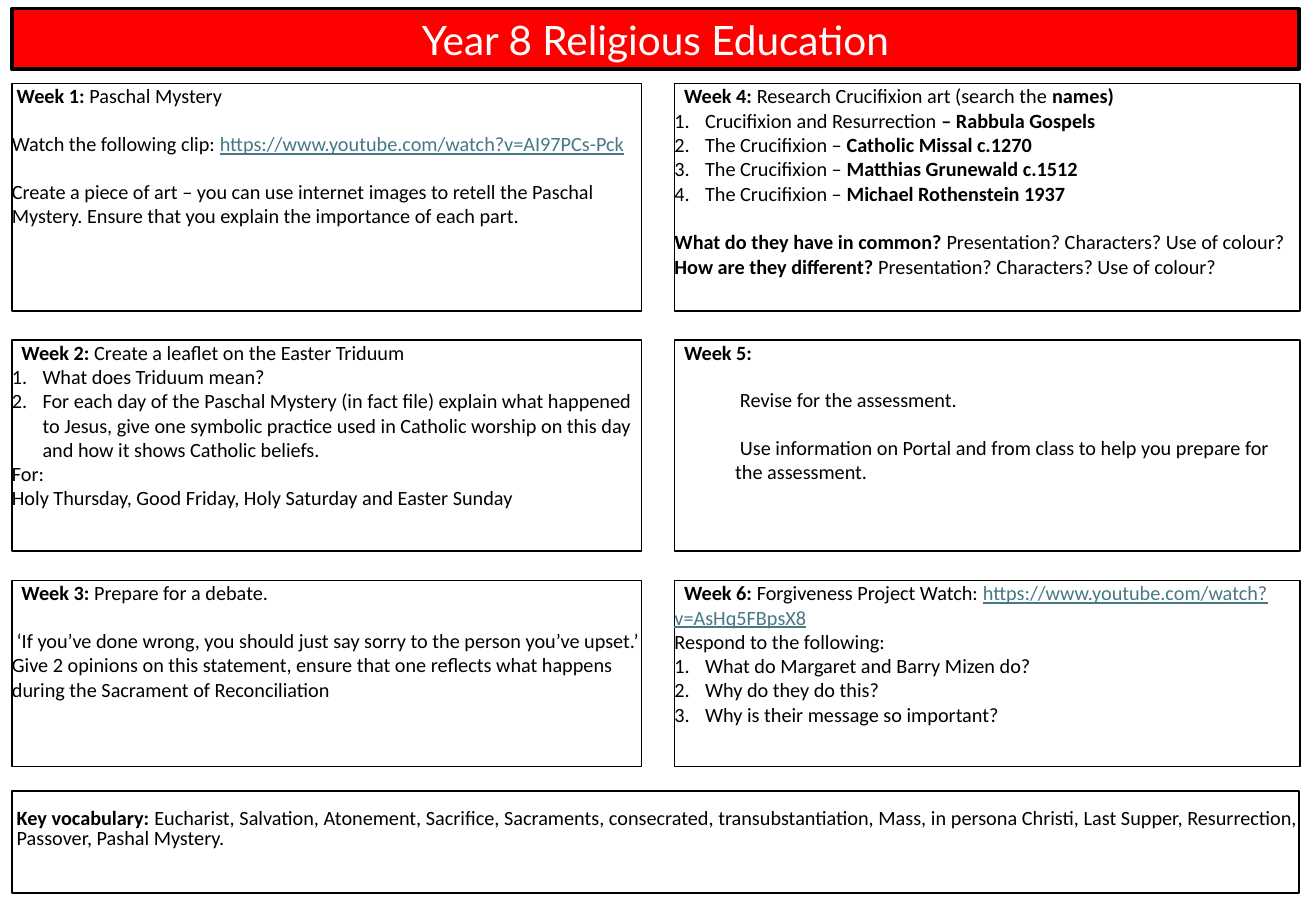
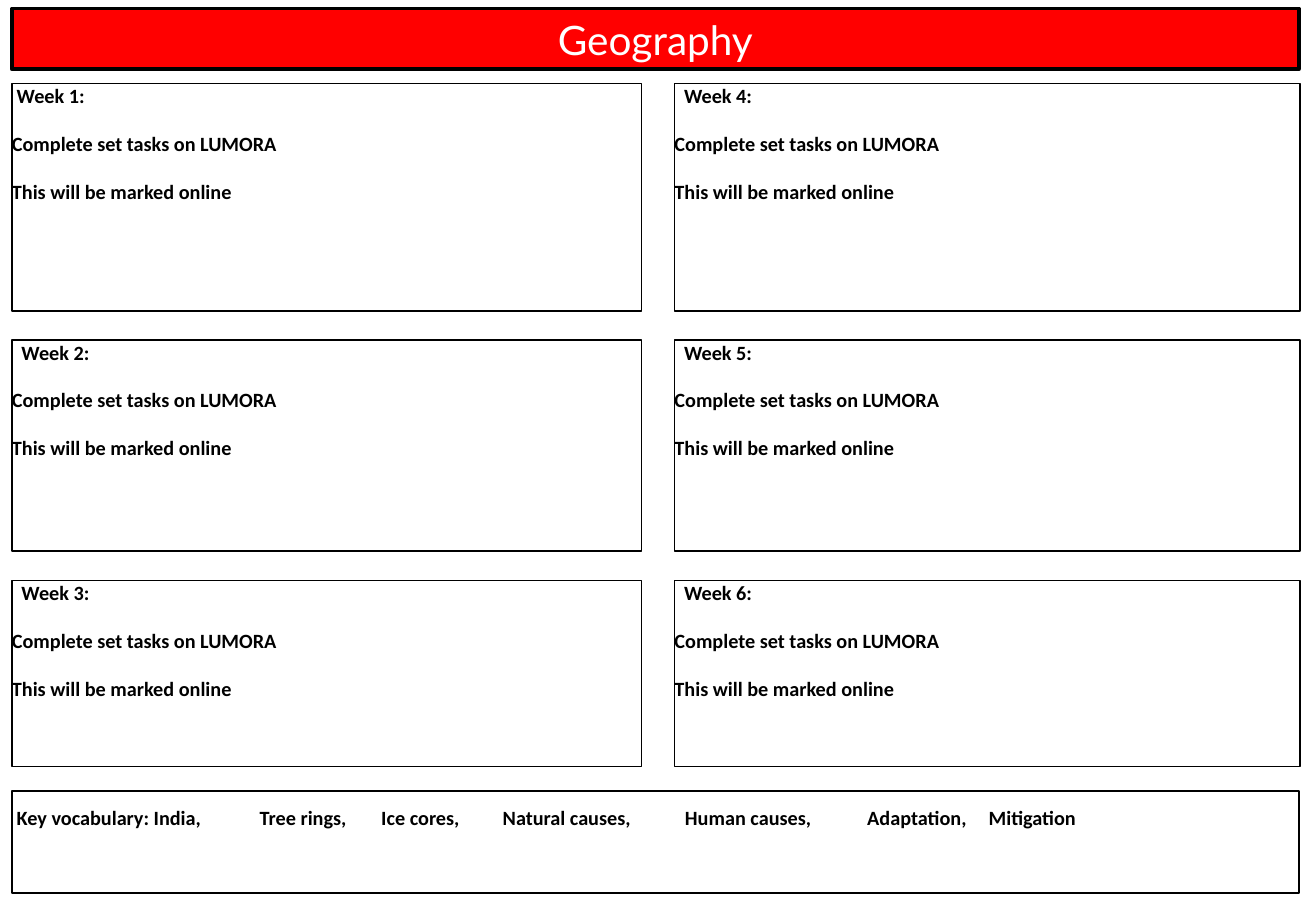
from dataclasses import dataclass

import pptx
import pptx.dml.color
import pptx.enum.shapes
import pptx.enum.text
import pptx.oxml.ns
import pptx.util
from lxml import etree

Cm, Pt = pptx.util.Cm, pptx.util.Pt
ALIGN = pptx.enum.text.PP_ALIGN
ANCHOR = pptx.enum.text.MSO_ANCHOR

# Shared look
BLACK, WHITE, RED, LINK = "000000", "FFFFFF", "FF0000", "467886"
TITLE_FONT, BODY_FONT = "Lato", "Calibri"
TITLE_SIZE, BODY_SIZE = 24, 12
GAP = 13.9  # points between separated paragraphs
ONE_LINE = 14.5
NUDGE = 0.1  # width of one space, in cm

# Page grid, in cm
LEFT, FULL_WIDTH = 0.25, 26.9
COLUMNS = ((LEFT, 13.16), (14.1, 13.08))
ROW_HEIGHTS = (4.75, 4.42, 3.89)
FIRST_ROW, ROW_GAP = 1.75, 0.61
VOCABULARY_TABS = (5.08, 7.62, 10.06, 15.14, 20.22, 22.76)


@dataclass(frozen=True)
class Span:
    text: str
    bold: bool = False
    link: bool = False


@dataclass(frozen=True)
class Para:
    spans: tuple[Span, ...]
    before: float = 0
    margin: float = 0
    indent: float = 0
    numbered: bool = False
    level: int = 0


@dataclass(frozen=True)
class Page:
    title: str
    weeks: tuple[tuple[Para, ...], ...]
    vocabulary: Para


# Text builders
def plain(text: str, before: float = 0, indent: float = 0) -> Para:
    return Para((Span(text),), before, indent=indent)


def strong(text: str, before: float = 0) -> Para:
    return Para((Span(text, bold=True),), before)


def numbered(text: str, bold_text: str = "") -> Para:
    spans = (Span(text),) + ((Span(bold_text, bold=True),) if bold_text else ())
    return Para(spans, margin=0.64, indent=-0.64, numbered=True)


def inset(text: str) -> Para:
    return Para((Span(text),), GAP, margin=1.27, indent=NUDGE, level=1)


def heading(week: int, *rest: Span) -> Para:
    label = f"Week {week}:" + (" " if rest else "")
    return Para((Span(label, bold=True), *rest), indent=NUDGE if week == 1 else 2 * NUDGE)


def question(text: str, before: float = 0) -> Para:
    return Para((Span(text, bold=True), Span(" Presentation? Characters? Use of colour?")), before)


def online_week(week: int) -> tuple[Para, ...]:
    return (heading(week), strong("Complete set tasks on LUMORA", GAP),
            strong("This will be marked online", GAP))


# Drawing
def colour(code: str) -> pptx.dml.color.RGBColor:
    return pptx.dml.color.RGBColor.from_string(code)


def style(run, font: str, size: float, code: str, bold: bool = False) -> None:
    run.font.name = font
    run.font.size = Pt(size)
    run.font.bold = bold
    run.font.color.rgb = colour(code)


def add_box(slide, left: float, top: float, width: float, height: float,
            line_width: float = 1, fill: str = ""):
    box = slide.shapes.add_shape(pptx.enum.shapes.MSO_SHAPE.RECTANGLE,
                                 Cm(left), Cm(top), Cm(width), Cm(height))
    box.shadow.inherit = False
    if fill:
        box.fill.solid()
        box.fill.fore_color.rgb = colour(fill)
    else:
        box.fill.background()
    box.line.color.rgb = colour(BLACK)
    box.line.width = Pt(line_width)
    frame = box.text_frame
    frame.word_wrap = True
    frame.vertical_anchor = ANCHOR.TOP
    frame.margin_left = frame.margin_right = frame.margin_top = frame.margin_bottom = 0
    return box


def write_para(para, content: Para) -> None:
    para.alignment = ALIGN.LEFT
    para.level = content.level
    para.space_before = Pt(content.before)
    properties = para._p.get_or_add_pPr()
    properties.set("marL", str(Cm(content.margin)))
    properties.set("indent", str(Cm(content.indent)))
    if content.numbered:
        etree.SubElement(properties, pptx.oxml.ns.qn("a:buAutoNum"), type="arabicPeriod")
    para.text = content.spans[0].text
    for span in content.spans[1:]:
        para.add_run().text = span.text
    for run, span in zip(para.runs, content.spans):
        style(run, BODY_FONT, BODY_SIZE, LINK if span.link else BLACK, span.bold)
        run.font.underline = span.link


def add_title(slide, text: str) -> None:
    box = add_box(slide, LEFT, 0.18, FULL_WIDTH, 1.27, 2.25, RED)
    frame = box.text_frame
    frame.vertical_anchor = ANCHOR.MIDDLE
    frame.text = text
    para = frame.paragraphs[0]
    para.alignment = ALIGN.CENTER
    style(para.runs[0], TITLE_FONT, TITLE_SIZE, WHITE)


def add_weeks(slide, weeks: tuple[tuple[Para, ...], ...]) -> None:
    for index, contents in enumerate(weeks):
        column, row = divmod(index, len(ROW_HEIGHTS))
        left, width = COLUMNS[column]
        top = FIRST_ROW + sum(ROW_HEIGHTS[:row]) + row * ROW_GAP
        frame = add_box(slide, left, top, width, ROW_HEIGHTS[row]).text_frame
        for position, content in enumerate(contents):
            para = frame.add_paragraph() if position else frame.paragraphs[0]
            write_para(para, content)


def add_vocabulary(slide, content: Para) -> None:
    frame = add_box(slide, LEFT, 16.54, FULL_WIDTH, 2.13).text_frame
    frame.margin_left = Cm(NUDGE)
    frame.margin_top = Pt(11.5)
    para = frame.paragraphs[0]
    write_para(para, content)
    para.alignment = ALIGN.JUSTIFY
    para.line_spacing = Pt(11.5)
    if any("\t" in span.text for span in content.spans):
        stops = etree.SubElement(para._p.get_or_add_pPr(), pptx.oxml.ns.qn("a:tabLst"))
        for stop in VOCABULARY_TABS:
            etree.SubElement(stops, pptx.oxml.ns.qn("a:tab"), pos=str(Cm(stop)), algn="l")


# Content
RELIGIOUS_EDUCATION = Page(
    "Year 8 Religious Education",
    (
        (heading(1, Span("Paschal Mystery")),
         Para((Span("Watch the following clip: "),
               Span("https://www.youtube.com/watch?v=AI97PCs-Pck", link=True)), GAP),
         plain("Create a piece of art – you can use internet images to retell the Paschal "
               "Mystery. Ensure that you explain the importance of each part.", GAP)),
        (heading(2, Span("Create a leaflet on the Easter Triduum")),
         numbered("What does Triduum mean?"),
         numbered("For each day of the Paschal Mystery (in fact file) explain what happened "
                  "to Jesus, give one symbolic practice used in Catholic worship on this day "
                  "and how it shows Catholic beliefs."),
         plain("For:"),
         plain("Holy Thursday, Good Friday, Holy Saturday and Easter Sunday")),
        (heading(3, Span("Prepare for a debate.")),
         plain("‘If you’ve done wrong, you should just say sorry to the person you’ve upset.’ "
               "Give 2 opinions on this statement, ensure that one reflects what happens "
               "during the Sacrament of Reconciliation", GAP, NUDGE)),
        (heading(4, Span("Research Crucifixion art (search the "), Span("names)", bold=True)),
         numbered("Crucifixion and Resurrection ", "– Rabbula Gospels"),
         numbered("The Crucifixion – ", "Catholic Missal c.1270"),
         numbered("The Crucifixion – ", "Matthias Grunewald c.1512"),
         numbered("The Crucifixion – ", "Michael Rothenstein 1937"),
         question("What do they have in common?", ONE_LINE),
         question("How are they different?")),
        (heading(5),
         inset("Revise for the assessment."),
         inset("Use information on Portal and from class to help you prepare for "
               "the assessment.")),
        (heading(6, Span("Forgiveness Project Watch: "),
                 Span("https://www.youtube.com/watch?v=AsHq5FBpsX8", link=True)),
         plain("Respond to the following:"),
         numbered("What do Margaret and Barry Mizen do?"),
         numbered("Why do they do this?"),
         numbered("Why is their message so important?")),
    ),
    Para((Span("Key vocabulary: ", bold=True),
          Span("Eucharist, Salvation, Atonement, Sacrifice, Sacraments, consecrated, "
               "transubstantiation, Mass, in persona Christi, Last Supper, Resurrection, "
               "Passover, Pashal Mystery."))),
)

GEOGRAPHY = Page(
    "Geography",
    tuple(online_week(week) for week in range(1, 7)),
    strong("Key vocabulary: India,\tTree rings,\tIce cores,\tNatural causes,"
           "\tHuman causes,\tAdaptation,\tMitigation"),
)


def main() -> None:
    deck = pptx.Presentation()
    deck.slide_width, deck.slide_height = Cm(27.51), Cm(19.05)
    for page in (RELIGIOUS_EDUCATION, GEOGRAPHY):
        slide = deck.slides.add_slide(deck.slide_layouts[6])
        add_vocabulary(slide, page.vocabulary)
        add_weeks(slide, page.weeks)
        add_title(slide, page.title)
    deck.save("out.pptx")


if __name__ == "__main__":
    main()
